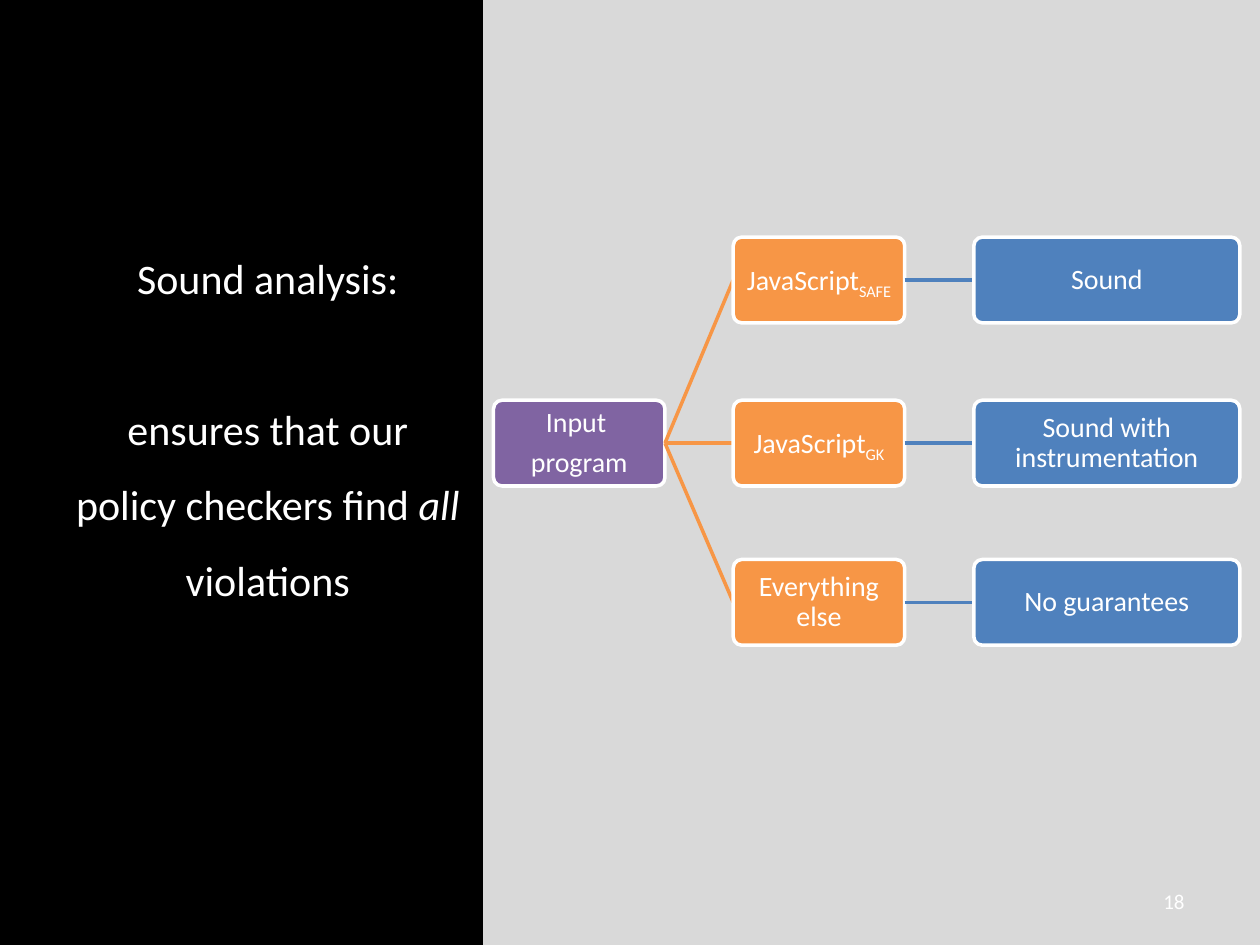
from pptx import Presentation
from pptx.dml.color import RGBColor
from pptx.enum.shapes import MSO_CONNECTOR, MSO_SHAPE
from pptx.enum.text import MSO_ANCHOR, PP_ALIGN
from pptx.util import Pt
from lxml import etree

RECTANGLE, ROUNDED = MSO_SHAPE.RECTANGLE, MSO_SHAPE.ROUNDED_RECTANGLE
STRAIGHT = MSO_CONNECTOR.STRAIGHT
MIDDLE = MSO_ANCHOR.MIDDLE
CENTER, RIGHT = PP_ALIGN.CENTER, PP_ALIGN.RIGHT
NAMESPACE = "http://schemas.openxmlformats.org/drawingml/2006/main"

COLORS = {
    "black": "000000",
    "panel": "D9D9D9",
    "white": "FFFFFF",
    "purple": "8064A2",
    "orange": "F79646",
    "blue": "4F81BD",
}


def color(name):
    return RGBColor.from_string(COLORS[name])


class SlideBuilder:
    font_name = "Calibri"
    line_width = 2
    box_height = 49

    def __init__(self, slide):
        self.slide = slide

    def background(self, fill):
        self.slide.background.fill.solid()
        self.slide.background.fill.fore_color.rgb = color(fill)

    def format_run(self, run, size):
        run.font.name = self.font_name
        run.font.size = Pt(size)
        run.font.color.rgb = color("white")

    def shape(self, kind, left, top, width, height, fill):
        shape = self.slide.shapes.add_shape(
            kind, Pt(left), Pt(top), Pt(width), Pt(height))
        shape.shadow.inherit = False
        shape.fill.solid()
        shape.fill.fore_color.rgb = color(fill)
        shape.line.fill.background()
        return shape

    def box(self, left, middle, width, fill, text, subscript=""):
        shape = self.shape(ROUNDED, left, middle - self.box_height / 2,
                           width, self.box_height, fill)
        shape.adjustments[0] = 0.1
        shape.line.color.rgb = color("white")
        shape.line.width = Pt(self.line_width)
        frame = shape.text_frame
        frame.text = text
        frame.word_wrap = True
        frame.vertical_anchor = MIDDLE
        frame.margin_left = frame.margin_right = Pt(2)
        frame.margin_top = frame.margin_bottom = Pt(2)
        if subscript:
            run = frame.paragraphs[0].add_run()
            run.text = subscript
            run.font._element.set("baseline", "-25000")
        for paragraph in frame.paragraphs:
            paragraph.alignment = CENTER
            paragraph.line_spacing = 0.9
            paragraph.space_after = Pt(5.6)
            for run in paragraph.runs:
                self.format_run(run, 16)

    def line(self, start_x, start_y, end_x, end_y, stroke):
        connector = self.slide.shapes.add_connector(
            STRAIGHT, Pt(start_x), Pt(start_y), Pt(end_x), Pt(end_y))
        connector.line.color.rgb = color(stroke)
        connector.line.width = Pt(self.line_width)
        etree.SubElement(connector._element.spPr, f"{{{NAMESPACE}}}effectLst")

    def text(self, left, top, width, height, text, size, alignment):
        shape = self.slide.shapes.add_textbox(
            Pt(left), Pt(top), Pt(width), Pt(height))
        frame = shape.text_frame
        frame.text = text
        frame.word_wrap = True
        frame.vertical_anchor = MIDDLE
        paragraph = frame.paragraphs[0]
        paragraph.alignment = alignment
        for run in paragraph.runs:
            self.format_run(run, size)
        return frame

    def statement(self, left, top, width, height, before, emphasis, after):
        size = 24
        frame = self.text(left, top, width, height, before, size, CENTER)
        frame.margin_left = frame.margin_right = Pt(6)
        paragraph = frame.paragraphs[0]
        paragraph.line_spacing = 1.5
        for words, italic in ((emphasis, True), (after, False)):
            run = paragraph.add_run()
            run.text = words
            self.format_run(run, size)
            run.font.italic = italic
        paragraph.add_line_break()
        # Line breaks carry their own text size
        for line_break in paragraph._p.findall(f"{{{NAMESPACE}}}br"):
            etree.SubElement(line_break, f"{{{NAMESPACE}}}rPr", sz=str(size * 100))


def main():
    presentation = Presentation()
    presentation.slide_width, presentation.slide_height = Pt(720), Pt(540)
    slide = presentation.slides.add_slide(presentation.slide_layouts[6])
    builder = SlideBuilder(slide)

    # Black left side with the statement, grey panel on the right
    builder.background("black")
    builder.shape(RECTANGLE, 276, 0, 444, 540, "panel")
    builder.statement(36, 24, 234, 456,
                      "Sound analysis:\v\vensures that our policy checkers find ",
                      "all", " violations")

    # Tree: input program, language subsets, guarantees
    input_left, subset_left, guarantee_left = 282, 419, 556.5
    node_width, guarantee_width = 98, 152
    input_right, subset_right = input_left + node_width, subset_left + node_width
    input_middle = 253.2
    builder.box(input_left, input_middle, node_width, "purple", "Input \nprogram")

    branches = (
        (160, "JavaScript", "SAFE", "Sound"),
        (input_middle, "JavaScript", "GK", "Sound with instrumentation"),
        (344.2, "Everything else", "", "No guarantees"),
    )
    for middle, subset, subscript, guarantee in branches:
        builder.line(input_right, input_middle, subset_left, middle, "orange")
        builder.box(subset_left, middle, node_width, "orange", subset, subscript)
        builder.line(subset_right, middle, guarantee_left, middle, "blue")
        builder.box(guarantee_left, middle, guarantee_width, "blue", guarantee)

    # Slide number
    builder.text(516, 500.5, 168, 28.75, "18", 12, RIGHT)

    presentation.save("out.pptx")


if __name__ == "__main__":
    main()
